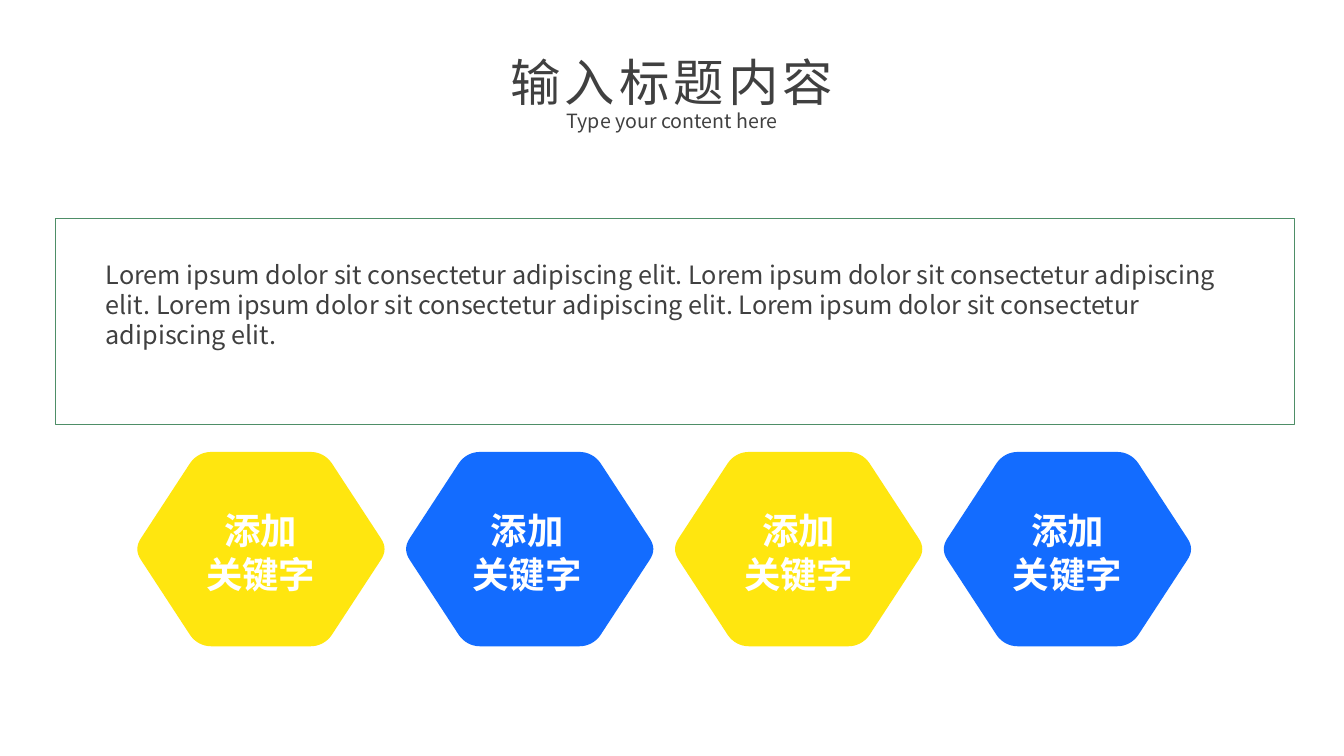
from pptx import Presentation
from pptx.util import Pt
from pptx.dml.color import RGBColor
from pptx.enum.shapes import MSO_SHAPE as SHAPE
from pptx.enum.text import MSO_AUTO_SIZE as AUTO_SIZE, PP_ALIGN as ALIGN
from pptx.oxml.ns import qn
from lxml.etree import SubElement

FONT = "Noto Sans CJK SC"
GRAY, WHITE, GREEN = "404040", "FFFFFF", "4E8E67"
YELLOW, BLUE = "FFE60F", "136CFF"


def rgb(value):
    return RGBColor.from_string(value)


def add_text(text, left, top, width, height, size, color=GRAY, bold=False,
             align=ALIGN.CENTER, inset=(0, 0), spacing=None, wrap=True):
    """Add a text box; inset is (horizontal, vertical), spacing is between letters."""
    frame = slide.shapes.add_textbox(Pt(left), Pt(top), Pt(width), Pt(height)).text_frame
    frame.word_wrap = wrap
    frame.auto_size = AUTO_SIZE.SHAPE_TO_FIT_TEXT
    frame.margin_left = frame.margin_right = Pt(inset[0])
    frame.margin_top = frame.margin_bottom = Pt(inset[1])
    frame.text = text
    for paragraph in frame.paragraphs:
        paragraph.alignment = align
        for run in paragraph.runs:
            run.font.size = Pt(size)
            run.font.bold = bold
            run.font.name = FONT
            run.font.color.rgb = rgb(color)
            properties = run.font._element
            SubElement(properties, qn("a:ea")).set("typeface", FONT)
            if spacing:
                properties.set("spc", str(spacing * 100))


prs = Presentation()
prs.slide_width, prs.slide_height = Pt(960), Pt(540)
slide = prs.slides.add_slide(prs.slide_layouts[6])

panel = slide.shapes.add_shape(SHAPE.ROUNDED_RECTANGLE, Pt(39.6), Pt(156.2), Pt(884.9), Pt(146.9))
panel.adjustments[0] = 0
panel.shadow.inherit = False
panel.fill.background()
panel.line.color.rgb = rgb(GREEN)
panel.line.width = Pt(0.25)
sentence = "Lorem ipsum dolor sit consectetur adipiscing elit."
add_text(" ".join([sentence] * 4), 75.6, 185.2, 813.6, 108.7, 18, align=ALIGN.LEFT)

# One quarter of the rounded hexagon around its centre: curve, slanted edge, curve
quarter = [(35.5, 69.4), (41.5, 69.4), (47, 66.5), (50.5, 61.5),
           (85.5, 8), (87.4, 5.2), (88.3, 2.6), (88.3, 0)]
right_half = quarter + [(x, -y) for x, y in reversed(quarter[:-1])]
hexagon = right_half + [(-x, y) for x, y in reversed(right_half)]
HALF_SEGMENTS = "CLCCLC"
segments = HALF_SEGMENTS + "L" + HALF_SEGMENTS

CENTER_Y = 392.2
keywords = [(186.4, 186.3, YELLOW), (378.4, 376.5, BLUE),
            (570.5, 570.5, YELLOW), (762.5, 762.5, BLUE)]
for center_x, label_x, color in keywords:
    outline = [(Pt(center_x + x), Pt(CENTER_Y + y)) for x, y in hexagon]
    builder = slide.shapes.build_freeform(*outline[0])
    builder.add_line_segments(outline[1:], close=True)
    badge = builder.convert_to_shape()
    badge.shadow.inherit = False
    badge.fill.solid()
    badge.fill.fore_color.rgb = rgb(color)
    badge.line.fill.background()

    # Join each three points of a rounded corner into one cubic curve
    edges = iter(list(badge._element.iter(qn("a:lnTo"))))
    for segment in segments:
        edge = next(edges)
        if segment == "C":
            edge.tag = qn("a:cubicBezTo")
            for extra in (next(edges), next(edges)):
                edge.append(extra[0])
                extra.getparent().remove(extra)

    add_text("添加\n关键字", label_x - 58.3, 362.9, 116.6, 63.4, 26, color=WHITE, bold=True)

add_text("Type your content here", 303.1, 74.2, 354.2, 24.5, 14, inset=(7.2, 3.6))
add_text("输入标题内容", 355.7, 33.1, 248.4, 51.1, 36, inset=(7.2, 3.6), spacing=3, wrap=False)

prs.save("out.pptx")
